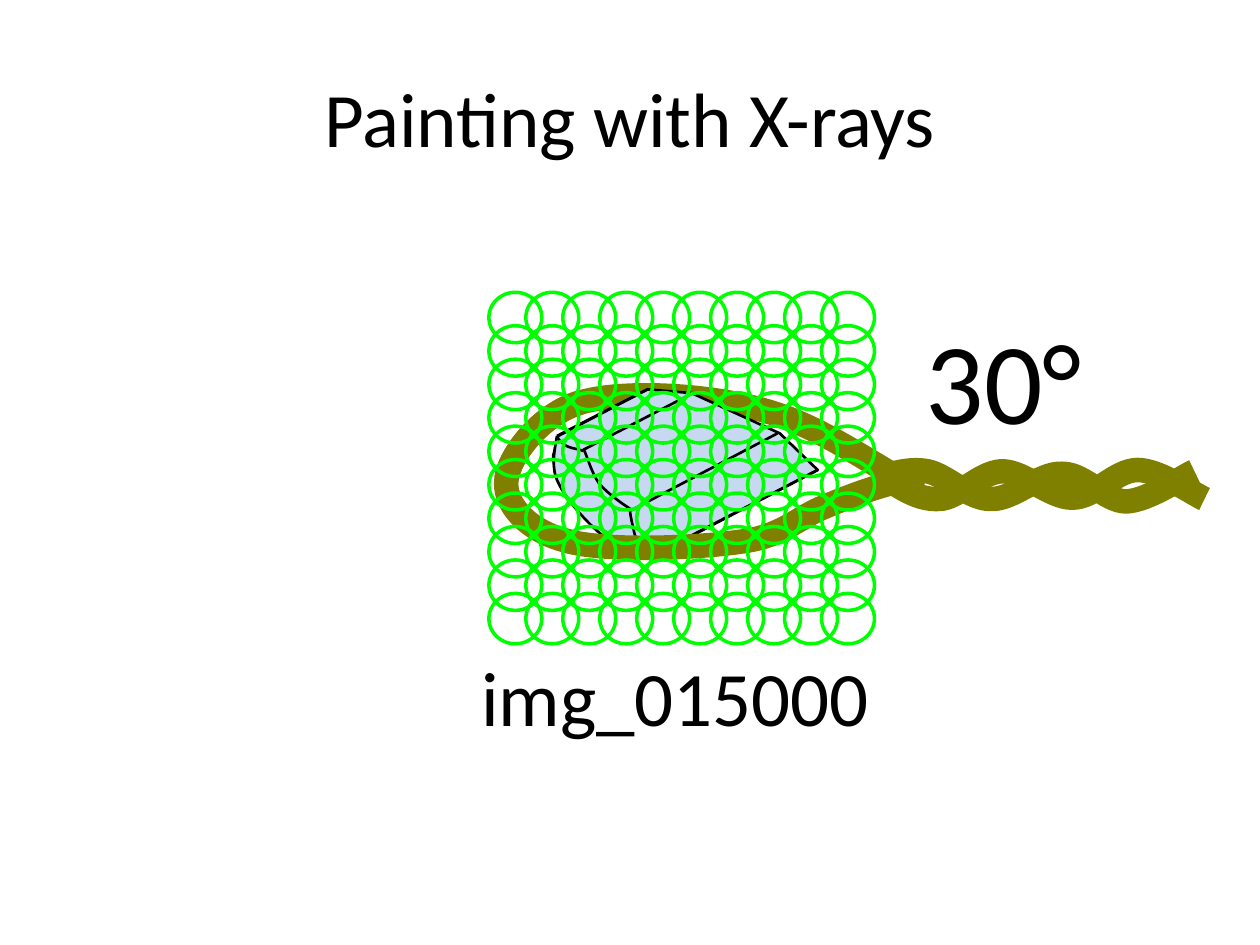
from itertools import product
from math import cos, radians, sin

from lxml.etree import SubElement
from pptx import Presentation
from pptx.dml.color import RGBColor
from pptx.enum.shapes import MSO_CONNECTOR, MSO_SHAPE
from pptx.enum.text import MSO_ANCHOR, MSO_AUTO_SIZE, PP_ALIGN
from pptx.oxml.ns import qn
from pptx.util import Emu, Pt

EMU_PER_PX = 9144
CURVE_STEPS = 40

ROPE = {"line": "808000", "width": 14, "turn": 180}
EDGE = {"line": "000000", "width": 1.5}
FACE = {"fill": "C6D9F1", "turn": 227.7, **EDGE}
BEAM = {"line": "00FF00", "width": 2}

BACK_LOOP = [(724, 386), (676, 358), (644, 335), (600, 324), (557, 313), (495, 310),
             (462, 319), (429, 328), (404, 362), (402, 380)]
ROPE_STRANDS = [
    [(462, 319), (429, 328), (404, 362), (402, 380), (399, 399), (418, 421), (449, 429),
     (479, 438), (553, 435), (587, 430), (621, 426), (634, 410), (655, 402),
     (676, 393), (699, 385), (714, 382), (730, 379), (732, 380), (735, 382)],
    [(700, 377), (714, 387), (729, 397), (745, 396), (760, 396), (777, 375), (795, 374),
     (813, 374), (833, 395), (851, 395), (869, 395), (885, 373), (903, 373),
     (920, 373), (947, 392), (956, 396)],
    [(698, 378), (706, 377), (721, 371), (736, 374), (751, 377), (769, 396), (786, 396),
     (804, 397), (825, 375), (843, 376), (861, 376), (877, 398), (894, 398),
     (912, 397), (939, 378), (948, 374)],
]
CRYSTAL_OUTLINE = [(649, 373), (517, 442), (510, 440), (499, 436), (487, 430), (476, 422),
                   (465, 412), (453, 399), (446, 388), (441, 378), (440, 371), (439, 362),
                   (441, 354), (443, 346), (514, 309), (549, 312), (619, 344), (649, 373)]
CRYSTAL_EDGES = [((649, 373), (516, 442)), ((617, 344), (501, 405)),
                 ((546, 314), (463, 357)), ((514, 309), (442, 346))]
CRYSTAL_CURVES = [
    [(517, 442), (503, 438), (490, 434), (477, 424), (465, 414), (449, 396), (443, 383),
     (437, 371), (440, 358), (442, 346)],
    [(517, 442), (515, 441), (506, 428), (504, 425), (503, 421), (500, 408), (500, 405)],
    [(502, 405), (497, 402), (482, 392), (475, 383), (469, 374), (466, 362), (463, 356)],
    [(463, 358), (459, 356), (451, 356), (447, 352), (443, 349), (443, 348), (442, 346)],
]


def px(length):
    """Turn a length in px into EMU."""
    return Emu(round(length * EMU_PER_PX))


def color(code):
    """Turn a hex string into a colour."""
    return RGBColor.from_string(code)


def set_all(target, values):
    """Set each named value on the target."""
    for name, value in values.items():
        setattr(target, name, value)


def set_line(shape, look):
    """Give the shape its line colour and width."""
    shape.line.color.rgb = color(look["line"])
    shape.line.width = Pt(look["width"])


def set_look(shape, look):
    """Give the shape its fill and line, without a shadow."""
    shape.shadow.inherit = False
    if "fill" in look:
        shape.fill.solid()
        shape.fill.fore_color.rgb = color(look["fill"])
    else:
        shape.fill.background()
    set_line(shape, look)


def turned(point, degrees):
    """Turn a point clockwise about the slide corner."""
    x, y = point
    angle = radians(degrees)
    return x * cos(angle) - y * sin(angle), x * sin(angle) + y * cos(angle)


def curve_extent(points):
    """Sample a chain of cubic curves to find where it reaches."""
    sampled = []
    for first in range(0, len(points) - 1, 3):
        corners = points[first:first + 4]
        for step in range(CURVE_STEPS + 1):
            t = step / CURVE_STEPS
            weights = ((1 - t) ** 3, 3 * t * (1 - t) ** 2, 3 * t ** 2 * (1 - t), t ** 3)
            sampled.append([sum(weight * corner[axis] for weight, corner
                                in zip(weights, corners)) for axis in (0, 1)])
    return sampled


def add_step(route, tag, points):
    """Add one drawing step to the route of a freeform."""
    step = SubElement(route, qn(tag))
    for x, y in points:
        SubElement(step, qn("a:pt"), x=str(px(x)), y=str(px(y)))


def add_outline(shapes, points, look, curved=True):
    """Draw a turned freeform of cubic curves, or a closed one of straight sides."""
    flat = [turned(point, -look["turn"]) for point in points]
    xs, ys = zip(*(curve_extent(flat) if curved else flat))
    left, top, width, height = min(xs), min(ys), max(xs) - min(xs), max(ys) - min(ys)
    center_x, center_y = turned((left + width / 2, top + height / 2), look["turn"])
    box_left, box_top = center_x - width / 2, center_y - height / 2
    builder = shapes.build_freeform(px(box_left), px(box_top), scale=1.0)
    builder.add_line_segments([(px(box_left + width), px(box_top + height))], close=False)
    outline = builder.convert_to_shape()
    outline.rotation = look["turn"]
    set_look(outline, look)

    route = outline._element.find(".//" + qn("a:path"))
    for step in list(route):
        route.remove(step)
    start, *others = [(x - left, y - top) for x, y in flat]
    add_step(route, "a:moveTo", [start])
    tag, stride = ("a:cubicBezTo", 3) if curved else ("a:lnTo", 1)
    if not curved:
        others.pop()
    for first in range(0, len(others), stride):
        add_step(route, tag, others[first:first + stride])
    if not curved:
        SubElement(route, qn("a:close"))


def add_edge(shapes, start, end):
    """Draw one straight edge of the crystal."""
    ends = [px(value) for value in (*start, *end)]
    edge = shapes.add_connector(MSO_CONNECTOR.STRAIGHT, *ends)
    set_line(edge, EDGE)
    SubElement(edge._element.spPr, qn("a:effectLst"))


def add_crystal(shapes):
    """Draw the crystal with its edges and curved faces."""
    add_outline(shapes, CRYSTAL_OUTLINE, FACE, curved=False)
    for start, end in CRYSTAL_EDGES:
        add_edge(shapes, start, end)
    for points in CRYSTAL_CURVES:
        add_outline(shapes, points, FACE)


def add_beam_grid(shapes, left, top, width, height, count):
    """Draw a square grid of overlapping beam spots, spread over the given travel."""
    for row, column in product(range(count), repeat=2):
        x = left + column * width / (count - 1)
        y = top + row * height / (count - 1)
        spot = shapes.add_shape(MSO_SHAPE.OVAL, px(x), px(y), px(42), px(40))
        set_look(spot, BEAM)


def add_text(shapes, text, area, size, frame_values, alignment=PP_ALIGN.LEFT):
    """Add a text box with one line of text."""
    box = shapes.add_textbox(*[px(value) for value in area])
    set_all(box.text_frame, frame_values)
    para = box.text_frame.paragraphs[0]
    para.alignment = alignment
    span = para.add_run()
    span.text = text
    set_all(span.font, {"name": "Calibri", "size": Pt(size)})
    span.font.color.rgb = color("000000")


def main():
    """Build the slide and save it."""
    deck = Presentation()
    set_all(deck, {"slide_width": px(1000), "slide_height": px(750)})
    shapes = deck.slides.add_slide(deck.slide_layouts[6]).shapes

    add_outline(shapes, BACK_LOOP, ROPE)
    add_crystal(shapes)
    rope = shapes.add_group_shape()
    for points in ROPE_STRANDS:
        add_outline(rope.shapes, points, ROPE)
    beams = shapes.add_group_shape()
    add_beam_grid(beams.shapes, 388, 232, 264, 239, 10)

    label = {"word_wrap": False, "auto_size": MSO_AUTO_SIZE.SHAPE_TO_FIT_TEXT}
    title = {"word_wrap": True, "vertical_anchor": MSO_ANCHOR.MIDDLE}
    add_text(shapes, "30°", (725, 240, 160, 121), 66, label)
    add_text(shapes, "img_015000", (372, 511, 360, 84), 44, label)
    add_text(shapes, "Painting with X-rays", (50, 30, 900, 125), 44, title, PP_ALIGN.CENTER)
    deck.save("out.pptx")


if __name__ == "__main__":
    main()
